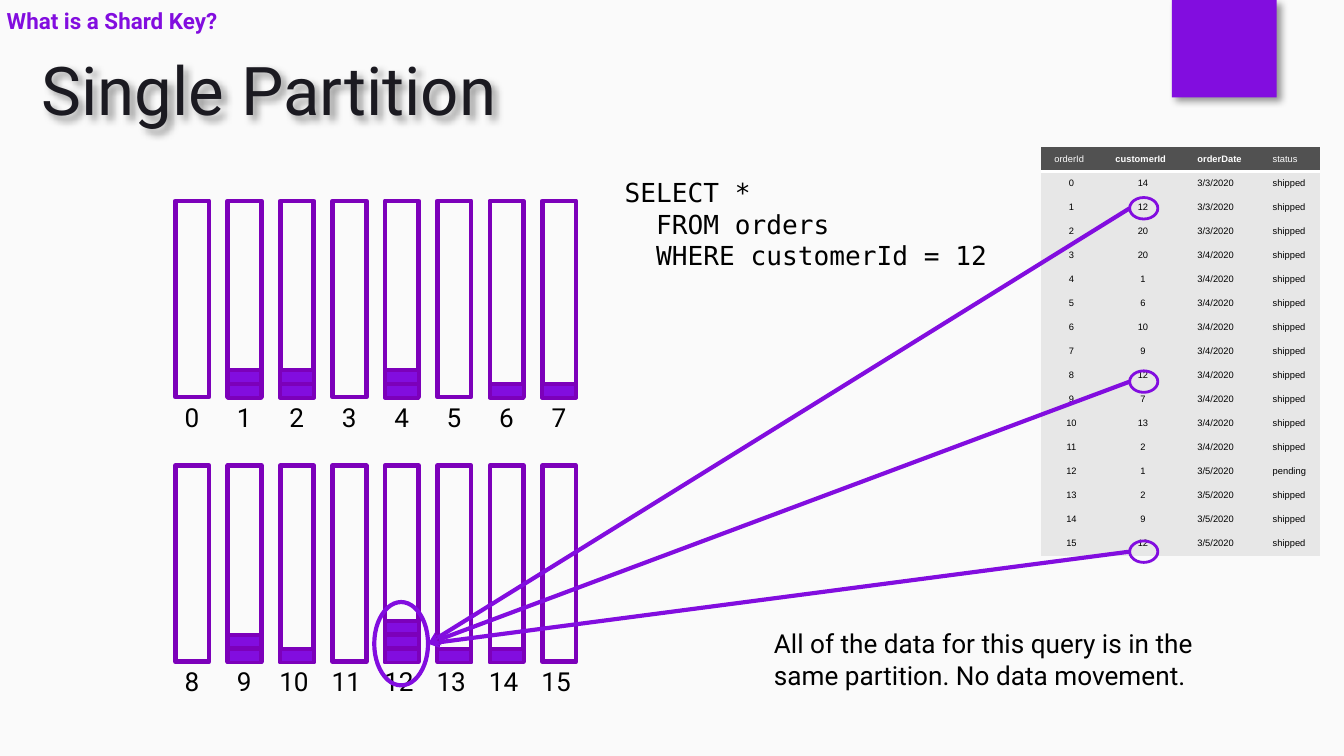
from lxml.etree import SubElement
from pptx import Presentation
from pptx.dml.color import RGBColor
from pptx.enum.shapes import MSO_CONNECTOR, MSO_SHAPE
from pptx.enum.text import MSO_ANCHOR, MSO_AUTO_SIZE, PP_ALIGN
from pptx.oxml.ns import qn
from pptx.util import Pt

PX = 4572  # EMU per px, 200 px to the inch

BACKGROUND = RGBColor(0xFA, 0xFA, 0xFA)
PURPLE = RGBColor(0x82, 0x0D, 0xDF)
BAR_LINE = RGBColor(0x7C, 0x00, 0xBA)
TITLE_COLOR = RGBColor(0x1B, 0x1A, 0x21)
BLACK = RGBColor(0x00, 0x00, 0x00)
HEADER_FILL = RGBColor(0x51, 0x51, 0x51)
HEADER_TEXT = RGBColor(0xFE, 0xFE, 0xFE)
ROW_FILL = RGBColor(0xE7, 0xE7, 0xE7)

PLAIN_TABLE_STYLE = "{2D5ABB26-0587-4C30-8999-92F81FD0307C}"
COLUMNS = [("orderId", 91), ("customerId", 122), ("orderDate", 112), ("status", 91)]
CUSTOMERS = [14, 12, 20, 20, 1, 6, 10, 9, 12, 7, 13, 2, 1, 2, 9, 12]
DATES = ["3/3/2020"] * 3 + ["3/4/2020"] * 9 + ["3/5/2020"] * 4
PENDING_ORDER = 12

# Number of stored rows in each partition
UPPER_COUNTS = [0, 2, 2, 0, 2, 0, 1, 1]
LOWER_COUNTS = [0, 2, 1, 0, 3, 1, 1, 0]


def emu(*lengths):
    return [length * PX for length in lengths]


def add_run(paragraph, text, size, color, font="Roboto", bold=False):
    run = paragraph.add_run()
    run.text = text
    run.font.size = Pt(size)
    run.font.name = font
    run.font.bold = bold
    run.font.color.rgb = color


def prepare_frame(shape, inset):
    frame = shape.text_frame
    frame.word_wrap = True
    frame.auto_size = MSO_AUTO_SIZE.NONE
    frame.vertical_anchor = MSO_ANCHOR.TOP
    frame.margin_left = frame.margin_right = 20 * PX
    frame.margin_top = frame.margin_bottom = inset * PX
    return frame


def add_text(slide, box, lines, font="Roboto", inset=20):
    frame = prepare_frame(slide.shapes.add_textbox(*emu(*box)), inset)
    for index, line in enumerate(lines):
        paragraph = frame.add_paragraph() if index else frame.paragraphs[0]
        add_run(paragraph, line, 14, BLACK, font)


def add_outline(slide, kind, box, color, width, fill=None):
    shape = slide.shapes.add_shape(kind, *emu(*box))
    shape.shadow.inherit = False
    if fill is None:
        shape.fill.background()
    else:
        shape.fill.solid()
        shape.fill.fore_color.rgb = fill
    shape.line.color.rgb = color
    shape.line.width = Pt(width)
    return shape


def add_soft_shadow(shape):
    shape.shadow.inherit = False
    effects = shape._element.spPr.find(qn("a:effectLst"))
    shadow = SubElement(effects, qn("a:outerShdw"), blurRad=str(Pt(4)),
                        dist=str(Pt(3)), dir="2700000", algn="tl", rotWithShape="0")
    color = SubElement(shadow, qn("a:srgbClr"), val="000000")
    SubElement(color, qn("a:alpha"), val="40000")


def fill_placeholder(shape, box, text, size, color, bold=False):
    shape.left, shape.top, shape.width, shape.height = emu(*box)
    paragraph = prepare_frame(shape, 20).paragraphs[0]
    paragraph.alignment = PP_ALIGN.LEFT
    paragraph.space_before = Pt(0)
    add_run(paragraph, text, size, color, bold=bold)


def add_heading(slide):
    square = add_outline(slide, MSO_SHAPE.RECTANGLE, (1744, 0, 156, 145), PURPLE, 1, PURPLE)
    square.line.fill.background()
    add_soft_shadow(square)
    fill_placeholder(slide.placeholders[1], (-10, -10, 1600, 60),
                     "What is a Shard Key?", 12, PURPLE, bold=True)
    title = slide.shapes.title
    fill_placeholder(title, (42, 52, 1688, 200), "Single Partition", 36, TITLE_COLOR)
    add_soft_shadow(title)


def fill_cell(cell, text, fill, color, bold=False, centered=False):
    cell.fill.solid()
    cell.fill.fore_color.rgb = fill
    paragraph = cell.text_frame.paragraphs[0]
    paragraph.alignment = PP_ALIGN.CENTER if centered else PP_ALIGN.LEFT
    add_run(paragraph, text, 5, color, "Arial", bold)


def add_bottom_border(cell):
    border = SubElement(cell._tc.get_or_add_tcPr(), qn("a:lnB"), w=str(Pt(2)))
    SubElement(SubElement(border, qn("a:solidFill")), qn("a:srgbClr"), val="FFFFFF")
    cell._tc.tcPr.insert(0, border)  # borders come before the fill


def add_orders_table(slide, left, top):
    row_count, row_height = len(CUSTOMERS) + 1, 30
    width = sum(column_width for _, column_width in COLUMNS)
    frame = slide.shapes.add_table(row_count, len(COLUMNS),
                                   *emu(left, top, width, row_height * row_count))
    table = frame.table
    table.first_row = table.horz_banding = False
    table._tbl.tblPr.find(qn("a:tableStyleId")).text = PLAIN_TABLE_STYLE
    for row in table.rows:
        row.height = row_height * PX
    for index, (name, column_width) in enumerate(COLUMNS):
        table.columns[index].width = column_width * PX
        cell = table.cell(0, index)
        fill_cell(cell, name, HEADER_FILL, HEADER_TEXT, bold=index in (1, 2))
        add_bottom_border(cell)
    for order, (customer, date) in enumerate(zip(CUSTOMERS, DATES)):
        status = "pending" if order == PENDING_ORDER else "shipped"
        for index, value in enumerate((order, customer, date, status)):
            fill_cell(table.cell(order + 1, index), str(value), ROW_FILL, BLACK,
                      centered=index < 2)


def add_partitions(slide, left, top, first_number, counts):
    pitch, width, height, block_height = 78, 50, 292, 20
    for index, count in enumerate(counts):
        x = left + pitch * index
        add_outline(slide, MSO_SHAPE.RECTANGLE, (x, top, width, height), BAR_LINE, 2.5)
        # Stored rows, stacked from the bottom
        for level in range(count):
            y = top + height - 19 - (block_height + 1) * level
            add_outline(slide, MSO_SHAPE.RECTANGLE, (x, y, width, block_height),
                        BAR_LINE, 2, PURPLE)
        # Partition number
        label = str(first_number + index)
        offset, label_width = (-21, 86) if len(label) == 2 else (-6, 50)
        add_text(slide, (x + offset, top + height - 4, label_width, 68), [label], inset=10)


def add_arrow(slide, start, end):
    arrow = slide.shapes.add_connector(MSO_CONNECTOR.STRAIGHT, *emu(*start, *end))
    arrow.line.color.rgb = PURPLE
    arrow.line.width = Pt(2.25)
    SubElement(arrow.line._get_or_add_ln(), qn("a:tailEnd"), type="stealth")
    SubElement(arrow._element.spPr, qn("a:effectLst"))


def add_matches(slide, left, tops, target):
    """Circle the matching cells and point from each to the target partition."""
    width, height = 42, 32
    for top in tops:
        add_outline(slide, MSO_SHAPE.OVAL, (left, top, width, height), PURPLE, 1.5)
    add_outline(slide, MSO_SHAPE.OVAL, target, PURPLE, 2.25)
    x, y, target_width, target_height = target
    for top in tops:
        add_arrow(slide, (left, top + height // 2),
                  (x + target_width, y + target_height // 2))


def main():
    presentation = Presentation()
    presentation.slide_width, presentation.slide_height = emu(2000, 1125)
    slide = presentation.slides.add_slide(presentation.slide_layouts[0])
    slide.background.fill.solid()
    slide.background.fill.fore_color.rgb = BACKGROUND

    add_heading(slide)
    add_orders_table(slide, 1549, 219)
    add_partitions(slide, 261, 299, 0, UPPER_COUNTS)
    add_partitions(slide, 261, 693, len(UPPER_COUNTS), LOWER_COUNTS)
    add_text(slide, (910, 243, 604, 182),
             ["SELECT *", "  FROM orders", "  WHERE customerId = 12"], "DejaVu Sans Mono")
    add_matches(slide, 1681, (294, 552, 805), (557, 896, 80, 124))
    add_text(slide, (1132, 914, 708, 134),
             ["All of the data for this query is in the same partition. No data movement."])
    presentation.save("out.pptx")


if __name__ == "__main__":
    main()
